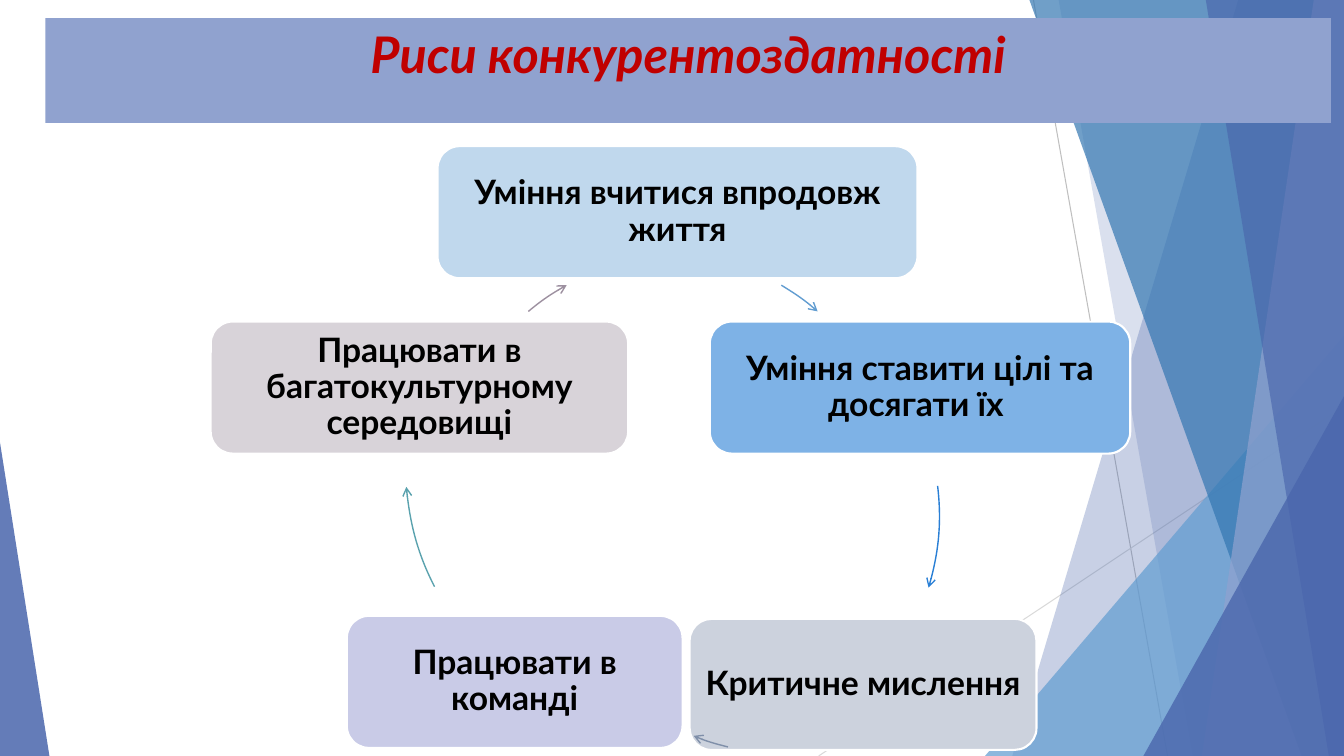
from lxml import etree
from pptx import Presentation
from pptx import util as u
from pptx.dml import color
from pptx.enum import shapes, text
from pptx.oxml import ns

WIDTH, HEIGHT = 13.33, 7.5
FONT = "Lato"
COLORS = {
    "white": "FFFFFF", "black": "000000", "red": "C00000",
    "gray": "BFBFBF", "light_gray": "D9D9D9",
    "indigo": "4A66AC", "sky": "629DD1", "steel": "3477B2", "lavender": "90A2CF",
    "pale_blue": "C0D8ED", "blue": "7EB2E6", "silver": "CCD2DD",
    "lilac": "C9CBE7", "mauve": "D8D3D9",
    "bright_blue": "297FD5", "slate": "7F8FA9", "teal": "5AA2AE", "plum": "9D90A0",
}
TITLE = "Риси конкурентоздатності"
RAYS = [
    ((10.25, 0), (11.58, HEIGHT), "gray"),
    ((WIDTH, 4.03), (8.12, HEIGHT), "light_gray"),
]
FACETS = [
    ("slice", 12.28, 10.04, "indigo", 30),
    ("slice", 10.5, 11.83, "indigo", 20),
    ("triangle", 9.77, 3.56, 4.17, 1, "sky", 72),
    ("slice", 10.21, 12.91, "steel", 70),
    ("slice", 13.03, 11.92, "lavender", 70),
    ("slice", 11.96, 13.18, "indigo", 65),
    ("triangle", 11.34, 1.99, 3.57, 1, "indigo", 80),
    ("triangle", 0, 0.49, 3.11, 0, "indigo", 85),
]
TRAITS = [
    ("Уміння вчитися впродовж життя", (4.34, 1.45, 4.76, 1.31), "pale_blue",
     [(7.75, 2.83), (7.88, 2.91), (8, 2.99), (8.11, 3.09)], "sky"),
    ("Уміння ставити цілі та досягати їх ", (7.04, 3.19, 4.17, 1.31), "blue",
     [(9.3, 4.82), (9.34, 5.16), (9.31, 5.5), (9.21, 5.83)], "bright_blue"),
    ("Критичне мислення", (6.84, 6.14, 3.44, 1.3), "silver",
     [(7.22, 7.41), (7.1, 7.38), (6.99, 7.35), (6.88, 7.3)], "slate"),
    ("Працювати в команді", (3.44, 6.11, 3.33, 1.31), "lilac",
     [(4.31, 5.82), (4.15, 5.51), (4.06, 5.17), (4.03, 4.83)], "teal"),
    ("Працювати в багатокультурному середовищі", (2.09, 3.19, 4.14, 1.31), "mauve",
     [(5.24, 3.09), (5.36, 2.99), (5.49, 2.9), (5.62, 2.83)], "plum"),
]


def rgb(name):
    return color.RGBColor.from_string(COLORS[name])


def inches(values):
    return [u.Inches(value) for value in values]


def set_fill(shape, name, opacity=100):
    shape.fill.solid()
    shape.fill.fore_color.rgb = rgb(name)
    if opacity < 100:
        fill_color = shape.fill._xPr.find(ns.qn("a:solidFill"))[0]
        etree.SubElement(fill_color, ns.qn("a:alpha"), val=str(opacity * 1000))


def set_line(shape, name, width):
    shape.line.color.rgb = rgb(name)
    shape.line.width = u.Pt(width)


def write(shape, words, size, name, anchor, inset, italic=None):
    frame = shape.text_frame
    frame.word_wrap = True
    frame.auto_size = text.MSO_AUTO_SIZE.NONE
    frame.vertical_anchor = anchor
    frame.margin_left = frame.margin_right = u.Inches(inset)
    frame.margin_top = frame.margin_bottom = u.Inches(0.05)
    paragraph = frame.paragraphs[0]
    paragraph.alignment = text.PP_ALIGN.CENTER
    run = paragraph.add_run()
    run.text = words
    run.font.name, run.font.size = FONT, u.Pt(size)
    run.font.bold, run.font.italic = True, italic
    run.font.color.rgb = rgb(name)
    return paragraph


def add_path(slide, points, close):
    start, *rest = [inches(point) for point in points]
    builder = slide.shapes.build_freeform(*start, scale=1.0)
    builder.add_line_segments(rest, close=close)
    shape = builder.convert_to_shape()
    shape.shadow.inherit = False
    return shape


def add_ray(slide, start, end, name):
    ray = slide.shapes.add_connector(
        shapes.MSO_CONNECTOR.STRAIGHT, *inches(start + end))
    set_line(ray, name, 0.75)
    etree.SubElement(ray.element.spPr, ns.qn("a:effectLst"))


def add_facet(slide, kind, *values):
    *place, name, opacity = values
    if kind == "slice":
        top, bottom = place
        shape = add_path(slide, [(top, 0), (WIDTH, 0), (WIDTH, HEIGHT),
                                 (bottom, HEIGHT)], True)
    else:
        left, width, height, apex = place
        shape = slide.shapes.add_shape(
            shapes.MSO_SHAPE.ISOSCELES_TRIANGLE,
            *inches((left, HEIGHT - height, width, height)))
        shape.adjustments[0] = apex
        shape.shadow.inherit = False
    set_fill(shape, name, opacity)
    shape.line.fill.background()


def add_trait(slide, words, box, fill, curve, arrow_color):
    card = slide.shapes.add_shape(shapes.MSO_SHAPE.ROUNDED_RECTANGLE, *inches(box))
    card.shadow.inherit = False
    set_fill(card, fill)
    set_line(card, "white", 1.5)
    paragraph = write(card, words, 24, "black", text.MSO_ANCHOR.MIDDLE, 0.04)
    paragraph.line_spacing = 0.9

    arrow = add_path(slide, curve, False)
    arrow.fill.background()
    set_line(arrow, arrow_color, 1)
    etree.SubElement(arrow.line._get_or_add_ln(), ns.qn("a:tailEnd"), type="arrow")
    segments = list(arrow.element.iter(ns.qn("a:lnTo")))
    outline = segments[0].getparent()
    bezier = etree.SubElement(outline, ns.qn("a:cubicBezTo"))
    for segment in segments:
        bezier.append(segment[0])
        outline.remove(segment)


def main():
    presentation = Presentation()
    presentation.slide_width, presentation.slide_height = inches((WIDTH, HEIGHT))
    slide = presentation.slides.add_slide(presentation.slide_layouts[5])
    for ray in RAYS:
        add_ray(slide, *ray)
    for facet in FACETS:
        add_facet(slide, *facet)

    title = slide.shapes.title
    title.left, title.top, title.width, title.height = inches((0.45, 0.18, 12.75, 1.04))
    set_fill(title, "lavender")
    write(title, TITLE, 36, "red", text.MSO_ANCHOR.TOP, 0.1, True)
    title.element.getparent().append(title.element)

    for trait in TRAITS:
        add_trait(slide, *trait)
    presentation.save("out.pptx")


if __name__ == "__main__":
    main()
